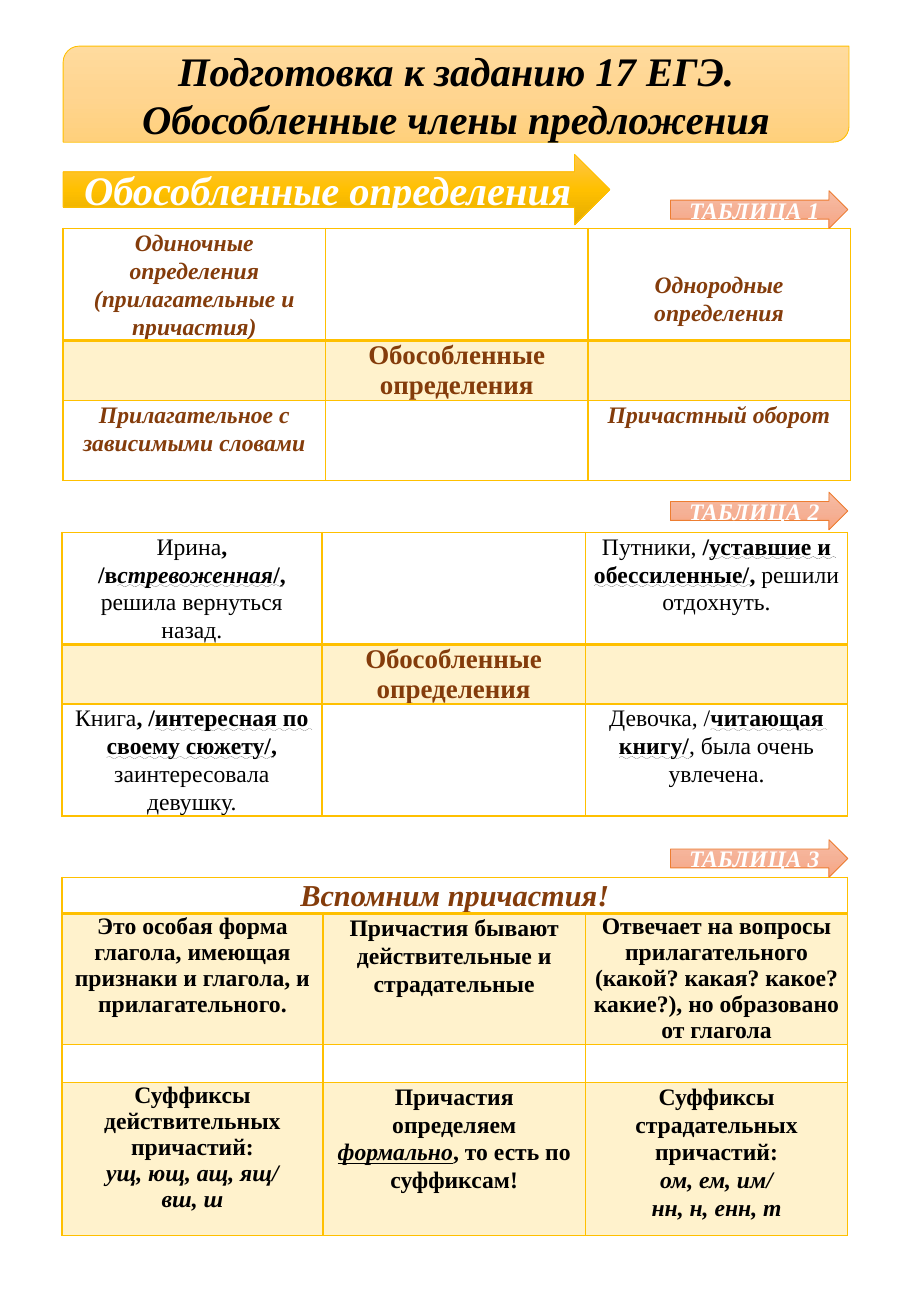
from copy import deepcopy
from dataclasses import dataclass

from lxml import etree
from pptx import Presentation
from pptx.dml.color import RGBColor
from pptx.enum import shapes, text
from pptx.oxml import ns
from pptx.util import Inches, Pt

FONT = "Times New Roman"
BLACK = RGBColor(0x00, 0x00, 0x00)
WHITE = RGBColor(0xFF, 0xFF, 0xFF)
BROWN = RGBColor(0x84, 0x3C, 0x0B)
GOLD = RGBColor(0xFF, 0xC0, 0x00)
PALE_GOLD = RGBColor(0xFF, 0xF2, 0xCC)
ORANGE = RGBColor(0xED, 0x7D, 0x31)
TITLE_GRADIENT = [RGBColor(0xFF, 0xDB, 0x9E), RGBColor(0xFF, 0xD5, 0x90), RGBColor(0xFF, 0xD0, 0x7C)]
GOLD_GRADIENT = [RGBColor(0xFF, 0xC6, 0x4B), GOLD, RGBColor(0xE3, 0xAB, 0x00)]
PEACH_GRADIENT = [RGBColor(0xF7, 0xBD, 0xA5), RGBColor(0xF5, 0xB1, 0x96), RGBColor(0xF8, 0xA5, 0x82)]

PLAIN = {"name": FONT, "size": Pt(14), "bold": False, "italic": False}
BOLD = PLAIN | {"bold": True}
ITALIC = BOLD | {"italic": True}
WAVY = BOLD | {"underline": text.MSO_UNDERLINE.WAVY_LINE}
WAVY_ITALIC = WAVY | {"italic": True}
UNDERLINED = ITALIC | {"underline": True}
CENTRE = BOLD | {"size": Pt(16)}
HEADLINE = ITALIC | {"size": Pt(18)}
HEADING = ITALIC | {"size": Pt(24)}


@dataclass
class Run:
    words: str
    style: dict
    color: RGBColor = BLACK


@dataclass
class Cell:
    paragraphs: list[list[Run]]
    line_spacing: float = 1.07
    margin_top: float = 0


@dataclass
class Grid:
    left: float
    top: float
    columns: list[float]
    rows: list[float]
    shaded: set[int]
    cells: list[list[Cell | None]]
    merged_header: bool = False


@dataclass
class Banner:
    kind: shapes.MSO_SHAPE
    box: tuple[float, float, float, float]
    gradient: list[RGBColor]
    line: RGBColor
    lines: list[str]
    style: dict
    color: RGBColor


def brown(words: str, style: dict = ITALIC, **options: float) -> Cell:
    return Cell([[Run(words, style, BROWN)]], **options)


def black(*runs: tuple[str, dict]) -> Cell:
    return Cell([[Run(*run) for run in runs]])


def bold_lines(heading: str, *endings: str, line_spacing: float = 1.07) -> Cell:
    """Bold first paragraph, bold italic paragraphs after it."""
    return Cell([[Run(heading, BOLD)], *[[Run(ending, ITALIC)] for ending in endings]], line_spacing)


def write(frame, paragraphs: list[list[Run]], line_spacing: float = 1.0) -> None:
    for index, runs in enumerate(paragraphs):
        paragraph = frame.add_paragraph() if index else frame.paragraphs[0]
        paragraph.alignment = text.PP_ALIGN.CENTER
        paragraph.line_spacing = line_spacing
        for item in runs:
            run = paragraph.add_run()
            run.text = item.words
            for name, value in item.style.items():
                setattr(run.font, name, value)
            run.font.color.rgb = item.color


def draw_banner(slide, banner: Banner) -> None:
    shape = slide.shapes.add_shape(banner.kind, *map(Inches, banner.box))
    shape.shadow.inherit = False
    shape.fill.gradient()
    shape.fill.gradient_angle = 270
    stop_list = shape._element.spPr.find(".//" + ns.qn("a:gsLst"))
    stop_list.insert(1, deepcopy(stop_list[0]))
    for index, (stop, color) in enumerate(zip(shape.fill.gradient_stops, banner.gradient)):
        stop.position = index / 2
        stop.color.rgb = color
    shape.line.color.rgb = banner.line
    shape.line.width = Pt(0.5)
    shape.text_frame.word_wrap = True
    shape.text_frame.vertical_anchor = text.MSO_ANCHOR.MIDDLE
    write(shape.text_frame, [[Run(line, banner.style, banner.color)] for line in banner.lines])


def add_borders(cell, row: int) -> None:
    """Gold cell borders, doubled between the first row and the second."""
    properties = cell._tc.get_or_add_tcPr()
    thick_side = {0: "B", 1: "T"}.get(row)
    for side in "LRTB":
        width = Pt(2 if side == thick_side else 1)
        line = etree.SubElement(properties, ns.qn(f"a:ln{side}"), w=str(width))
        fill = etree.SubElement(line, ns.qn("a:solidFill"))
        etree.SubElement(fill, ns.qn("a:srgbClr"), val=str(GOLD))


def draw_grid(slide, grid: Grid) -> None:
    size = Inches(sum(grid.columns)), Inches(sum(grid.rows))
    table = slide.shapes.add_table(
        len(grid.rows), len(grid.columns), Inches(grid.left), Inches(grid.top), *size).table
    table.first_row = table.horz_banding = False
    for column, width in zip(table.columns, grid.columns):
        column.width = Inches(width)
    for row, height in zip(table.rows, grid.rows):
        row.height = Inches(height)
    for row, contents in enumerate(grid.cells):
        for column, content in enumerate(contents):
            cell = table.cell(row, column)
            cell.margin_left = cell.margin_right = Inches(0.07)
            cell.margin_top = Inches(content.margin_top if content else 0)
            cell.margin_bottom = 0
            add_borders(cell, row)
            if row in grid.shaded:
                cell.fill.solid()
                cell.fill.fore_color.rgb = PALE_GOLD
            else:
                cell.fill.background()
            if content:
                write(cell.text_frame, content.paragraphs, content.line_spacing)
    if grid.merged_header:
        table.cell(0, 0).merge(table.cell(0, len(grid.columns) - 1))


CENTRE_ROW = [None, brown("Обособленные определения", CENTRE, line_spacing=1.0), None]
GRIDS = [
    Grid(0.52, 1.88, [2.16] * 3, [0.92, 0.49, 0.66], {1}, [
        [brown("Одиночные определения (прилагательные и причастия)"), None,
         brown("Однородные определения", margin_top=0.35)],
        CENTRE_ROW,
        [brown("Прилагательное с зависимыми словами"), None, brown("Причастный оборот")],
    ]),
    Grid(0.51, 4.38, [2.14, 2.17, 2.16], [0.92, 0.49, 0.92], {1}, [
        [black(("Ирина", PLAIN), (", /в", BOLD), ("стревоженная", WAVY_ITALIC), ("/", WAVY),
               (", ", BOLD), ("решила вернуться назад.", PLAIN)), None,
         black(("Путники, ", PLAIN), ("/", BOLD), ("уставшие и обессиленные/", WAVY),
               (", ", BOLD), ("решили отдохнуть.", PLAIN))],
        CENTRE_ROW,
        [black(("Книга", PLAIN), (", /", BOLD), ("интересная по своему сюжету/", WAVY),
               (", ", BOLD), ("заинтересовала девушку.", PLAIN)), None,
         black(("Девочка, /", PLAIN), ("читающая книгу/", WAVY), (", была очень увлечена.", PLAIN))],
    ]),
    Grid(0.51, 7.22, [2.15, 2.16, 2.16], [0.29, 1.08, 0.31, 1.26], {1, 3}, [
        [brown("Вспомним причастия!", HEADLINE), None, None],
        [bold_lines("Это особая форма глагола, имеющая признаки и глагола, и прилагательного.",
                    line_spacing=1.0),
         bold_lines("Причастия бывают действительные и страдательные"),
         bold_lines("Отвечает на вопросы прилагательного (какой? какая? какое? какие?), "
                    "но образовано от глагола", line_spacing=1.0)],
        [None, None, None],
        [bold_lines("Суффиксы действительных причастий:", "ущ, ющ, ащ, ящ/", "вш, ш", line_spacing=1.0),
         black(("Причастия определяем ", BOLD), ("формально", UNDERLINED),
               (", то есть по суффиксам!", BOLD)),
         bold_lines("Суффиксы страдательных причастий:", "ом, ем, им/", "нн, н, енн, т")],
    ], merged_header=True),
]
ARROW = shapes.MSO_SHAPE.RIGHT_ARROW
BANNERS = [
    Banner(shapes.MSO_SHAPE.ROUND_2_DIAG_RECTANGLE, (0.52, 0.38, 6.47, 0.79), TITLE_GRADIENT, GOLD,
           ["Подготовка к заданию 17 ЕГЭ.", "Обособленные члены предложения"], HEADING, BLACK),
    Banner(ARROW, (0.52, 1.27, 4.5, 0.58), GOLD_GRADIENT, GOLD,
           ["Обособленные определения"], HEADING, WHITE),
    *[Banner(ARROW, (5.52, top, 1.46, 0.31), PEACH_GRADIENT, ORANGE,
             [f"ТАБЛИЦА {number}"], ITALIC, WHITE)
      for number, top in enumerate([1.57, 4.05, 6.91], start=1)],
]


def main() -> None:
    presentation = Presentation()
    presentation.slide_width = Inches(7.5)
    presentation.slide_height = Inches(10.83)
    slide = presentation.slides.add_slide(presentation.slide_layouts[6])
    for grid in GRIDS:
        draw_grid(slide, grid)
    for banner in BANNERS:
        draw_banner(slide, banner)
    presentation.save("out.pptx")


if __name__ == "__main__":
    main()
